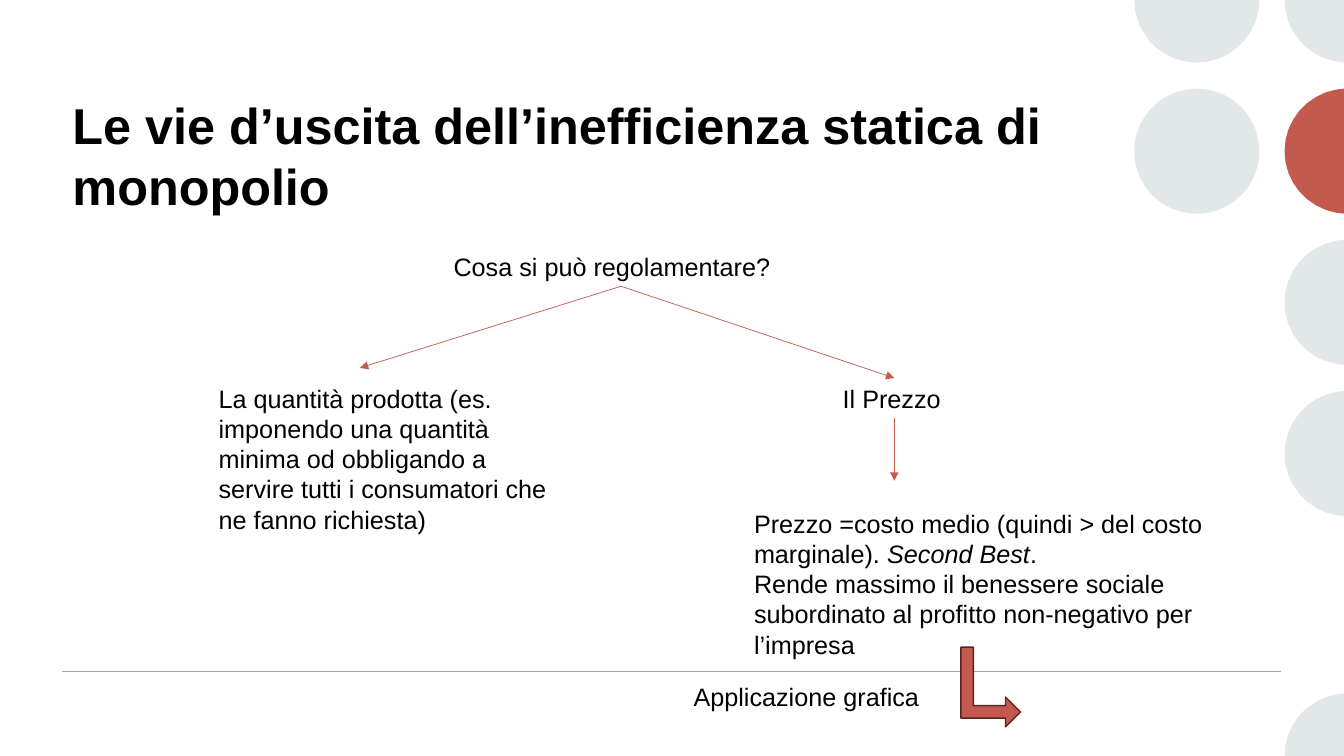
from math import cos, radians, sin

from lxml import etree
from pptx import Presentation
from pptx.dml.color import RGBColor
from pptx.enum.shapes import MSO_CONNECTOR, MSO_SHAPE
from pptx.enum.text import MSO_ANCHOR
from pptx.oxml.ns import qn
from pptx.util import Inches, Pt

WIDE, HIGH = 13.33, 7.5
RED = RGBColor(0xC3, 0x5A, 0x4D)
BROWN = RGBColor(0x55, 0x27, 0x22)
MIST = RGBColor(0xE2, 0xE7, 0xE8)
GREY = RGBColor(0xA6, 0xA6, 0xA6)
BLACK = RGBColor(0, 0, 0)
STRAIGHT = MSO_CONNECTOR.STRAIGHT
OVAL, BENT = MSO_SHAPE.OVAL, MSO_SHAPE.BENT_UP_ARROW
TOP, MIDDLE = MSO_ANCHOR.TOP, MSO_ANCHOR.MIDDLE


def add_text(slide, box, paras, size=18, bold=False, wrap=True, anchor=TOP):
    """Add a text box; each paragraph is a list of (text, italic) runs."""
    frame = slide.shapes.add_textbox(*map(Inches, box)).text_frame
    frame.word_wrap = wrap
    frame.vertical_anchor = anchor
    for i, runs in enumerate(paras):
        para = frame.add_paragraph() if i else frame.paragraphs[0]
        font = para.font
        font.name, font.size, font.bold = "Arial", Pt(size), bold
        font.color.rgb = BLACK
        for text, slant in runs:
            run = para.add_run()
            run.text = text
            if slant:
                run.font.italic = True


def add_line(slide, start, end, color, width, arrow=False):
    """Draw a straight line, with an arrowhead at its end if asked."""
    line = slide.shapes.add_connector(STRAIGHT, *map(Inches, start + end))
    line.line.color.rgb = color
    line.line.width = Pt(width)
    if arrow:
        etree.SubElement(line.line._get_or_add_ln(), qn("a:tailEnd"), type="triangle")
    etree.SubElement(line._element.spPr, qn("a:effectLst"))


def paint(shape, color):
    """Give a shape a plain fill without shadow or outline."""
    shape.shadow.inherit = False
    shape.fill.solid()
    shape.fill.fore_color.rgb = color
    shape.line.fill.background()


def add_arc(slide, x, y, radius, first, last):
    """Draw the part of a disc between two angles, cut at the slide's edge."""
    rim = [
        (Inches(min(x + radius * cos(radians(t)), WIDE)),
         Inches(y + radius * sin(radians(t))))
        for t in range(first, last + 1, 10)
    ]
    path = slide.shapes.build_freeform(Inches(min(x, WIDE)), Inches(y))
    path.add_line_segments(rim, close=True)
    return path.convert_to_shape()


def add_dots(slide, left, step, radius):
    """Place the grid of discs along the right edge."""
    near, far = left + radius, left + radius + 1.49
    side = Inches(2 * radius)
    disc = slide.shapes.add_shape(OVAL, Inches(left), Inches(step - radius), side, side)
    paint(disc, MIST)
    arcs = [
        (near, 0, 0, 180),
        (far, 0, 90, 180),
        (far, 1, 90, 270),
        (far, 2, 90, 270),
        (far, 3, 90, 270),
        (far, 5, 180, 270),
    ]
    for x, row, first, last in arcs:
        arc = add_arc(slide, x, row * step, radius, first, last)
        paint(arc, RED if row == 1 else MIST)


def add_tree(slide, left, top):
    """Place the question, its two answers and the arrows between them."""
    add_text(slide, (left + 2.33, top, 3.51, 0.4),
             [[("Cosa si può regolamentare?", False)]], wrap=False)
    add_text(slide, (left, top + 1.31, 3.48, 1.62),
             [[("La quantità prodotta (es. imponendo una quantità minima od "
                "obbligando a servire tutti i consumatori che ne fanno richiesta)", False)]])
    add_text(slide, (left + 6.19, top + 1.31, 1.21, 0.4),
             [[("Il Prezzo", False)]], wrap=False)
    add_text(slide, (left + 5.31, top + 2.55, 4.89, 1.62), [
        [("Prezzo =costo medio (quindi > del costo marginale). ", False),
         ("Second Best", True), (".", False)],
        [("Rende massimo il benessere sociale subordinato al profitto "
          "non-negativo per l’impresa", False)],
    ])
    root = (left + 4.09, top + 0.4)
    price = left + 6.8
    arrows = [
        (root, (left + 1.5, top + 1.21)),
        (root, (price, top + 1.31)),
        ((price, top + 1.71), (price, top + 2.33)),
    ]
    for start, end in arrows:
        add_line(slide, start, end, RED, 0.5, arrow=True)


def add_pointer(slide, left, top):
    """Place the closing label and its bent arrow."""
    add_text(slide, (left, top, 2.59, 0.4),
             [[("Applicazione grafica", False)]], wrap=False)
    bent = slide.shapes.add_shape(
        BENT, *map(Inches, (left + 2.65, top - 0.19, 0.79, 0.59)))
    bent.rotation = 90
    for i, value in enumerate((0.21, 0.25, 0.25)):
        bent.adjustments[i] = value
    paint(bent, RED)
    bent.line.color.rgb = BROWN
    bent.line.width = Pt(1)


def main():
    """Build the slide and save it."""
    deck = Presentation()
    deck.slide_width, deck.slide_height = Inches(WIDE), Inches(HIGH)
    slide = deck.slides.add_slide(deck.slide_layouts[6])
    add_dots(slide, 11.25, 1.5, 0.62)
    add_line(slide, (0.62, 6.66), (12.71, 6.66), GREY, 1)
    add_text(slide, (0.62, 0.84, 10.08, 1.39),
             [[("Le vie d’uscita dell’inefficienza statica di monopolio", False)]],
             size=36, bold=True, anchor=MIDDLE)
    add_tree(slide, 2.07, 2.44)
    add_pointer(slide, 6.78, 6.71)
    deck.save("out.pptx")


if __name__ == "__main__":
    main()
